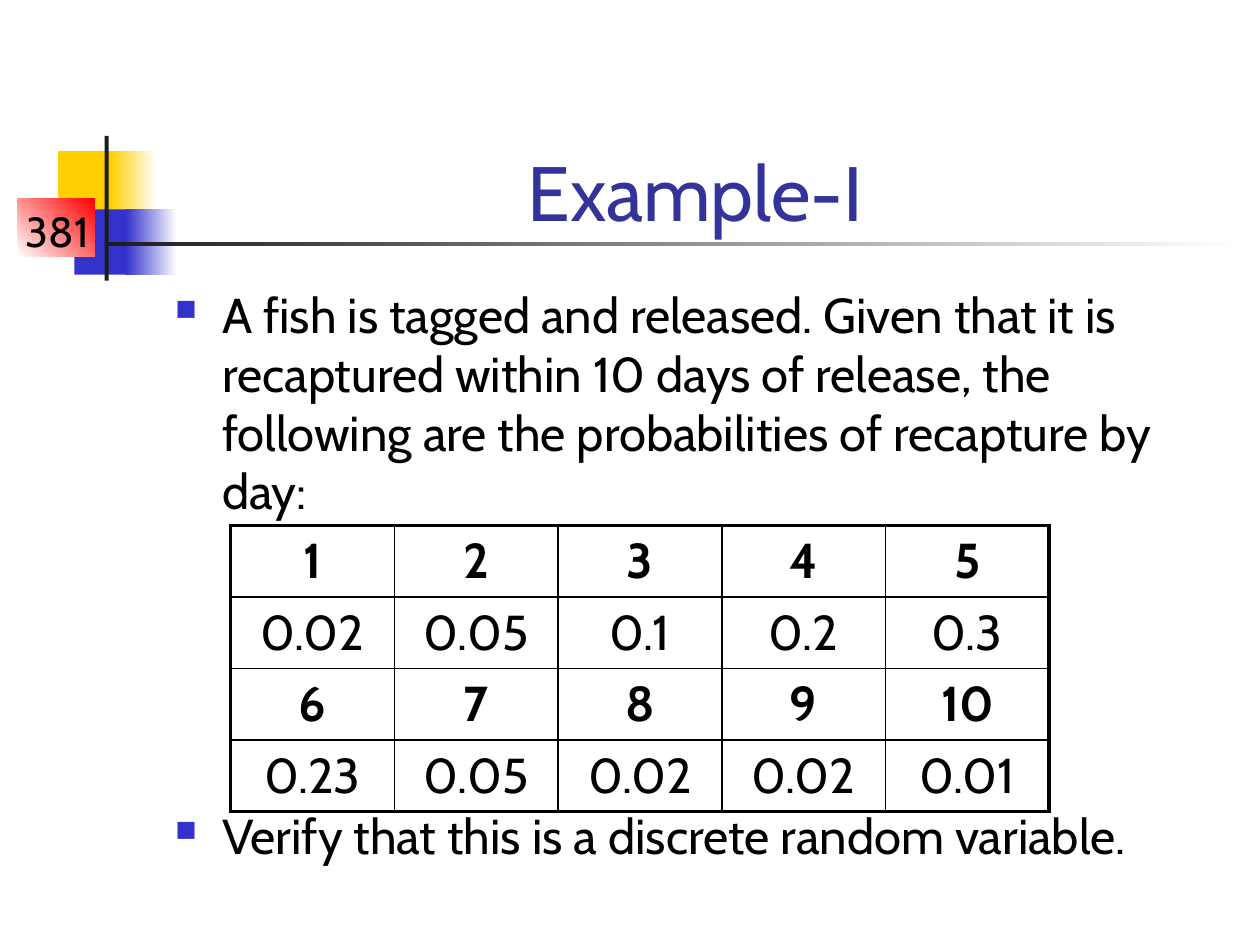
from lxml import etree
from pptx import Presentation
from pptx import util as u
from pptx.dml.color import RGBColor
from pptx.enum import shapes, text
from pptx.oxml import ns

FONT = "Cabin"
BLACK = RGBColor(0x00, 0x00, 0x00)
WHITE = RGBColor(0xFF, 0xFF, 0xFF)
CHARCOAL = RGBColor(0x1C, 0x1C, 0x1C)
YELLOW = RGBColor(0xFF, 0xCF, 0x01)
BLUE = RGBColor(0x33, 0x33, 0xCC)
RED = RGBColor(0xFF, 0x00, 0x00)
TITLE_BLUE = RGBColor(0x33, 0x33, 0x99)

DECORATIONS = [
    ((1.17, 3.05, 1.22, 1.32), (YELLOW,), 0),
    ((2.24, 3.05, 0.91, 1.32), (YELLOW, WHITE), 0),
    ((1.5, 4.22, 1.17, 1.32), (BLUE,), 0),
    ((2.54, 4.22, 1.02, 1.32), (BLUE, WHITE), 0),
    ((0.36, 4.01, 1.55, 1.17), (WHITE, RED), 45),
    ((2.11, 2.74, 0.08, 2.92), (CHARCOAL,), 0),
    ((2.11, 4.88, 22.86, 0.08), (CHARCOAL, WHITE), 0),
]
PROBABILITIES = [
    ["1", "2", "3", "4", "5"],
    ["0.02", "0.05", "0.1", "0.2", "0.3"],
    ["6", "7", "8", "9", "10"],
    ["0.23", "0.05", "0.02", "0.02", "0.01"],
]
COLUMN_WIDTH = 3.3
ROW_HEIGHT = 1.44


def add_child(parent, tag, **attributes):
    return etree.SubElement(parent, ns.qn(tag), attributes)


def write_text(paragraph, content, size=28, color=BLACK, bold=False,
               align=text.PP_ALIGN.CENTER, before=0):
    paragraph.alignment = align
    paragraph.space_before = u.Pt(before)
    run = paragraph.add_run()
    run.text = content
    run.font.name = FONT
    run.font.size = u.Pt(size)
    run.font.bold = bold
    run.font.color.rgb = color


def add_bullet(paragraph):
    properties = paragraph._p.get_or_add_pPr()
    properties.set("marL", str(u.Cm(0.95)))
    properties.set("indent", str(u.Cm(-0.95)))
    add_child(add_child(properties, "a:buClr"), "a:srgbClr", val=str(BLUE))
    add_child(properties, "a:buSzPct", val="60000")
    add_child(properties, "a:buChar", char="■")


def add_rectangle(slide, box, colors, angle):
    shape = slide.shapes.add_shape(shapes.MSO_SHAPE.RECTANGLE, *map(u.Cm, box))
    shape.shadow.inherit = False
    shape.line.fill.background()
    if len(colors) == 1:
        shape.fill.solid()
        shape.fill.fore_color.rgb = colors[0]
        return
    shape.fill.gradient()
    shape.fill.gradient_angle = angle
    for stop, color in zip(shape.fill.gradient_stops, colors):
        stop.color.rgb = color


def add_text_box(slide, box):
    frame = slide.shapes.add_textbox(*map(u.Cm, box)).text_frame
    frame.word_wrap = True
    return frame


def add_title(slide, content):
    title = slide.shapes.title
    title.left, title.top, title.width, title.height = map(
        u.Cm, (3.2, 1.73, 21.64, 3.18))
    title.text_frame.vertical_anchor = text.MSO_ANCHOR.BOTTOM
    write_text(title.text_frame.paragraphs[0], content, size=44, color=TITLE_BLUE)


def add_body(slide):
    frame = add_text_box(slide, (3.28, 5.61, 20.62, 11.43))
    question = frame.paragraphs[0]
    write_text(question, "A fish is tagged and released. Given that it is "
               "recaptured within 10 days of release, the following are the "
               "probabilities of recapture by day:", align=text.PP_ALIGN.LEFT)
    task = frame.add_paragraph()
    write_text(task, "Verify that this is a discrete random variable.",
               align=text.PP_ALIGN.LEFT, before=163)
    for paragraph in (question, task):
        add_bullet(paragraph)


def set_borders(cell, outer_sides):
    properties = cell._tc.get_or_add_tcPr()
    for side in "LRTB":
        width = u.Pt(2.25 if side in outer_sides else 1)
        line = add_child(properties, f"a:ln{side}", w=str(width))
        fill = add_child(line, "a:solidFill")
        add_child(fill, "a:srgbClr", val=str(BLACK))


def add_probability_table(slide, rows):
    row_count, column_count = len(rows), len(rows[0])
    table = slide.shapes.add_table(
        row_count, column_count, u.Cm(4.65), u.Cm(10.59),
        u.Cm(COLUMN_WIDTH * column_count), u.Cm(ROW_HEIGHT * row_count)).table
    for row_index, values in enumerate(rows):
        for column_index, value in enumerate(values):
            cell = table.cell(row_index, column_index)
            edges = {"L": column_index == 0, "R": column_index == column_count - 1,
                     "T": row_index == 0, "B": row_index == row_count - 1}
            set_borders(cell, [side for side, is_outer in edges.items() if is_outer])
            cell.fill.background()
            write_text(cell.text_frame.paragraphs[0], value,
                       bold=row_index % 2 == 0)


def main():
    presentation = Presentation()
    presentation.slide_width, presentation.slide_height = u.Cm(25.4), u.Cm(19.05)
    slide = presentation.slides.add_slide(presentation.slide_layouts[5])
    for box, colors, angle in DECORATIONS:
        add_rectangle(slide, box, colors, angle)
    number_frame = add_text_box(slide, (0.2, 4.01, 1.91, 1.27))
    write_text(number_frame.paragraphs[0], "381", size=24)
    add_title(slide, "Example-I")
    add_body(slide)
    add_probability_table(slide, PROBABILITIES)
    presentation.save("out.pptx")


if __name__ == "__main__":
    main()
